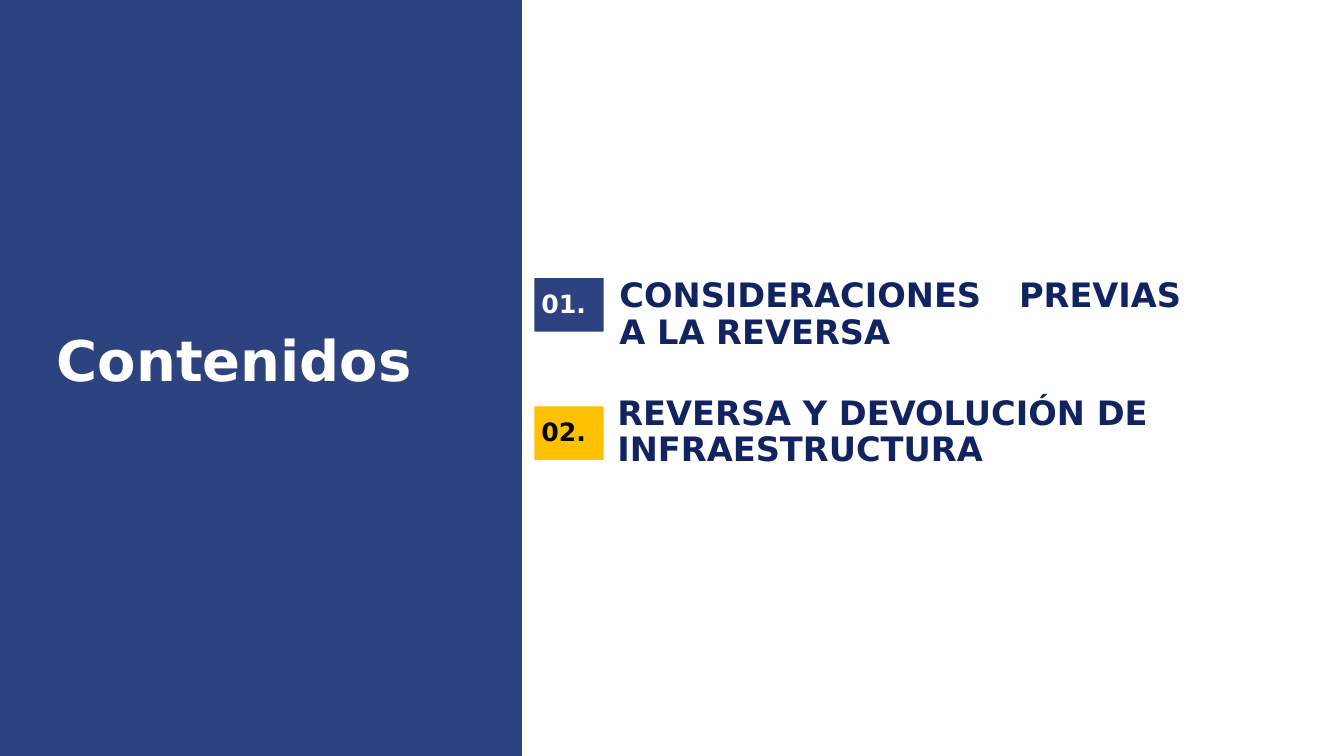
from pptx import Presentation
from pptx.dml.color import RGBColor
from pptx.enum.shapes import MSO_SHAPE
from pptx.enum.text import MSO_ANCHOR, MSO_AUTO_SIZE, PP_ALIGN
from pptx.util import Pt

PX = 9525  # EMU per px, 96 px to the inch
BLUE = RGBColor(0x2C, 0x43, 0x7F)
NAVY = RGBColor(0x12, 0x23, 0x61)
AMBER = RGBColor(0xFF, 0xC0, 0x00)
WHITE = RGBColor(0xFF, 0xFF, 0xFF)
BLACK = RGBColor(0x01, 0x00, 0x00)


def add_rectangle(left, top, width, height, color):
    box = slide.shapes.add_shape(
        MSO_SHAPE.RECTANGLE, left * PX, top * PX, width * PX, height * PX)
    box.shadow.inherit = False
    box.fill.solid()
    box.fill.fore_color.rgb = color
    box.line.fill.background()
    return box


def write(box, text, size, color, align=PP_ALIGN.LEFT, right_inset=10):
    frame = box.text_frame
    frame.word_wrap = True
    frame.auto_size = MSO_AUTO_SIZE.NONE
    frame.vertical_anchor = MSO_ANCHOR.MIDDLE
    frame.margin_left = 0
    frame.margin_right = right_inset * PX
    frame.margin_top = frame.margin_bottom = 5 * PX
    para = frame.paragraphs[0]
    para.text = text
    para.alignment = align
    para.line_spacing = 0.9
    para.font.name = "DejaVu Sans"
    para.font.size = Pt(size)
    para.font.bold = True
    para.font.color.rgb = color


deck = Presentation()
deck.slide_width = 1280 * PX
deck.slide_height = 720 * PX
slide = deck.slides.add_slide(deck.slide_layouts[5])

title = slide.shapes.title
title.left, title.top = 54 * PX, 294 * PX
title.width, title.height = 420 * PX, 105 * PX
write(title, "Contenidos", 40, WHITE)

# The side panel goes behind the title
panel = add_rectangle(0, 0, 497, 720, BLUE)
title.element.addprevious(panel.element)

# Number, badge top, badge fill, number colour, heading, left, top, alignment
topics = [
    ("01.", 265, BLUE, WHITE, "CONSIDERACIONES PREVIAS A LA REVERSA",
     590, 258, PP_ALIGN.JUSTIFY),
    ("02.", 387, AMBER, BLACK, "REVERSA Y DEVOLUCIÓN DE INFRAESTRUCTURA",
     588, 370, PP_ALIGN.LEFT),
]
for number, badge_top, fill, color, heading, left, top, align in topics:
    badge = add_rectangle(509, badge_top, 66, 51, fill)
    write(badge, number, 18, color, PP_ALIGN.CENTER)
    heading_box = slide.shapes.add_textbox(
        left * PX, top * PX, (1125 - left) * PX, 84 * PX)
    write(heading_box, heading, 24, NAVY, align, right_inset=0)

deck.save("out.pptx")
